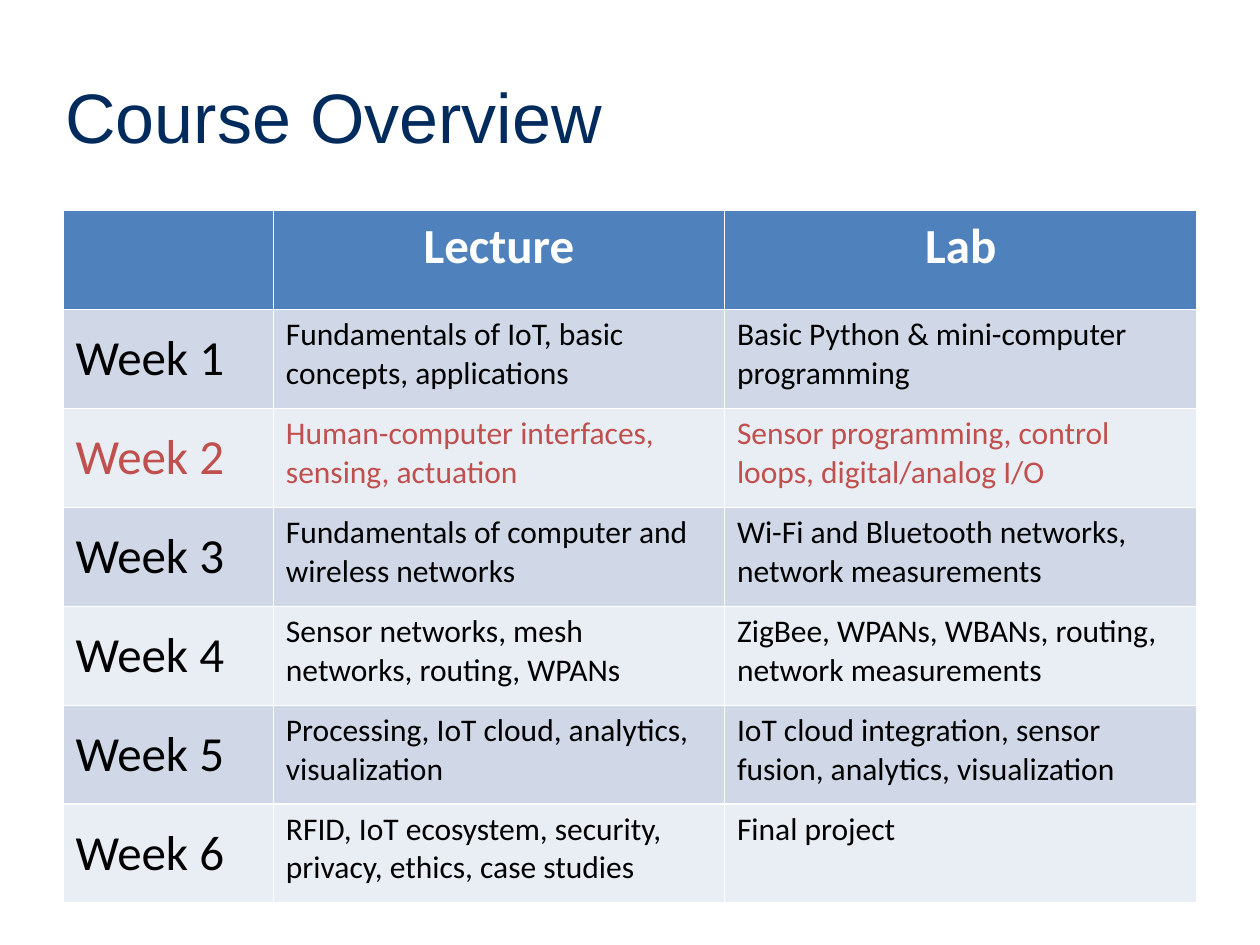
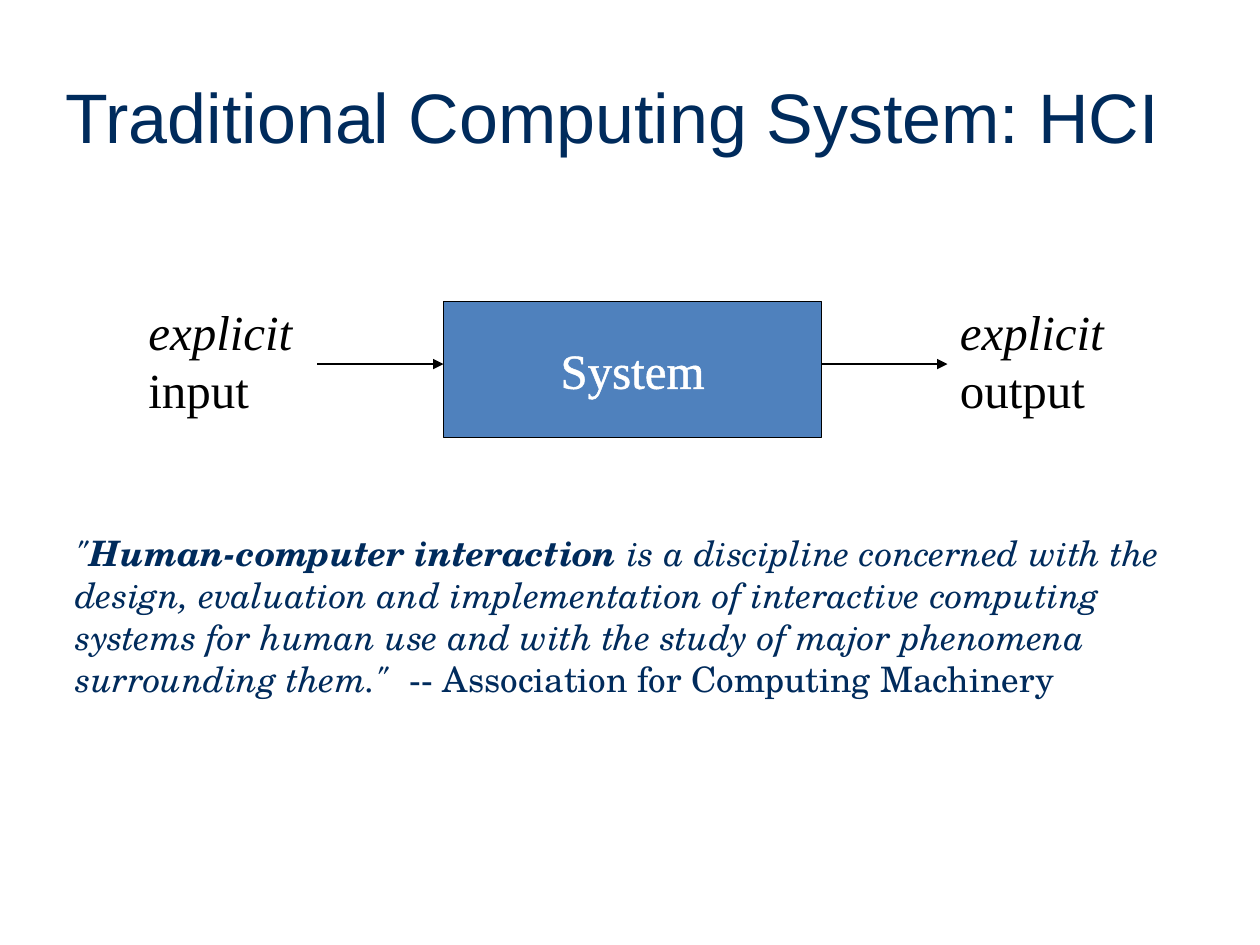
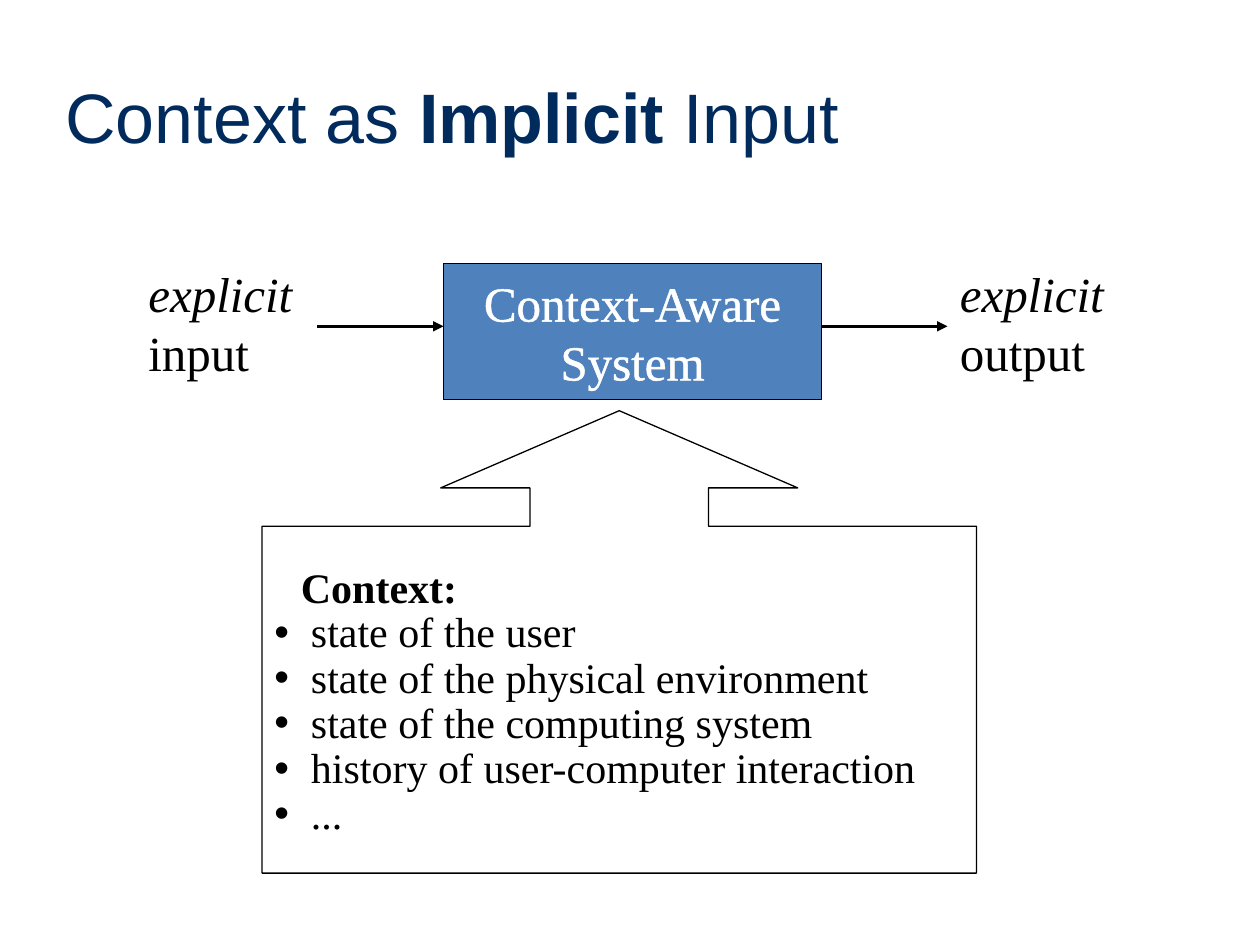
from lxml import etree
from pptx import Presentation
from pptx.dml.color import RGBColor
from pptx.enum.shapes import MSO_CONNECTOR, MSO_SHAPE
from pptx.enum.text import MSO_ANCHOR, MSO_AUTO_SIZE, PP_ALIGN
from pptx.oxml.ns import qn
from pptx.util import Inches, Pt

LEFT, CENTER = PP_ALIGN.LEFT, PP_ALIGN.CENTER
TOP, MIDDLE = MSO_ANCHOR.TOP, MSO_ANCHOR.MIDDLE
NO_FIT, GROW = MSO_AUTO_SIZE.NONE, MSO_AUTO_SIZE.SHAPE_TO_FIT_TEXT
RECTANGLE, CALLOUT = MSO_SHAPE.RECTANGLE, MSO_SHAPE.UP_ARROW_CALLOUT
STRAIGHT = MSO_CONNECTOR.STRAIGHT

NAVY, BLUE, RED = "002B5C", "4F81BD", "C0504D"
BLACK, WHITE = "000000", "FFFFFF"
ROW_FILLS = ("D0D8E8", "E9EDF4")
TITLE_ONLY, TITLE_AND_BODY = 5, 1

TITLE_FORMAT = dict(font="Arial", size=40, color=NAVY)
DIAGRAM_FORMAT = dict(font="Times New Roman", size=28, color=BLACK)

# A paragraph is a list of runs; a run is (text, style), style being "", "b", "i" or "bi".
COURSE_TITLE = [("Course Overview", "")]
HCI_TITLE = [("Traditional Computing System: HCI", "")]
CONTEXT_TITLE = [("Context as ", ""), ("Implicit", "b"), (" Input", "")]

COURSE_HEADER = ("", "Lecture", "Lab")
COURSE_WEEKS = [
    ("Fundamentals of IoT, basic concepts, applications",
     "Basic Python & mini-computer programming"),
    ("Human-computer interfaces, sensing, actuation",
     "Sensor programming, control loops, digital/analog I/O"),
    ("Fundamentals of computer and wireless networks",
     "Wi-Fi and Bluetooth networks, network measurements"),
    ("Sensor networks, mesh networks, routing, WPANs",
     "ZigBee, WPANs, WBANs, routing, network measurements"),
    ("Processing, IoT cloud, analytics, visualization",
     "IoT cloud integration, sensor fusion, analytics, visualization"),
    ("RFID, IoT ecosystem, security, privacy, ethics, case studies",
     "Final project"),
]
CURRENT_WEEK = 2
COURSE_COLUMNS = (1.67, 3.58, 3.75)

HCI_QUOTE = [
    ('"', "i"),
    ("Human-computer interaction ", "bi"),
    ("is a discipline concerned with the design, evaluation and implementation of "
     "interactive computing systems for human use and with the study of major "
     'phenomena surrounding them."', "i"),
    ("  -- Association for Computing Machinery", ""),
]

CONTEXT_ITEMS = [
    "state of the user",
    "state of the physical environment",
    "state of the computing system",
    "history of user-computer interaction",
    "...",
]


def rgb(value):
    return RGBColor.from_string(value)


def inches(*lengths):
    return [Inches(length) for length in lengths]


def write(frame, paragraphs, font, size, color, align=LEFT, anchor=TOP,
          wrap=True, fit=NO_FIT, outline=None):
    """Fill a text frame with paragraphs, each a list of (text, style) runs."""
    frame.word_wrap = wrap
    frame.auto_size = fit
    frame.vertical_anchor = anchor
    for number, runs in enumerate(paragraphs):
        paragraph = frame.add_paragraph() if number else frame.paragraphs[0]
        paragraph.alignment = align
        for text, style in runs:
            run = paragraph.add_run()
            run.text = text
            run.font.name = font
            run.font.size = Pt(size)
            run.font.bold = "b" in style
            run.font.italic = "i" in style
            run.font.color.rgb = rgb(color)
            if outline:
                add_outline(run, outline)


def add_outline(run, color):
    line = etree.Element(qn("a:ln"), w=str(Pt(0.75)))
    fill = etree.SubElement(line, qn("a:solidFill"))
    etree.SubElement(fill, qn("a:srgbClr"), val=color)
    run.font._element.insert(0, line)


def set_indent(paragraph, margin, first_line=0, bullet=None):
    properties = paragraph._p.get_or_add_pPr()
    properties.set("marL", str(Inches(margin)))
    properties.set("indent", str(Inches(first_line)))
    if bullet:
        etree.SubElement(properties, qn("a:buFont"), typeface="Arial")
        etree.SubElement(properties, qn("a:buChar"), char=bullet)
    else:
        etree.SubElement(properties, qn("a:buNone"))


def add_titled_slide(deck, layout, title_runs):
    slide = deck.slides.add_slide(deck.slide_layouts[layout])
    title = slide.shapes.title
    title.left, title.top, title.width, title.height = inches(0.42, 0.42, 9.08, 1)
    write(title.text_frame, [title_runs], anchor=MIDDLE, **TITLE_FORMAT)
    return slide


def add_outlined_shape(slide, kind, box, fill=None):
    shape = slide.shapes.add_shape(kind, *inches(*box))
    shape.shadow.inherit = False
    if fill:
        shape.fill.solid()
        shape.fill.fore_color.rgb = rgb(fill)
    else:
        shape.fill.background()
    shape.line.color.rgb = rgb(BLACK)
    shape.line.width = Pt(0.75)
    return shape


def add_arrow(slide, start, end, y):
    arrow = slide.shapes.add_connector(STRAIGHT, *inches(start, y, end, y))
    arrow.line.color.rgb = rgb(BLACK)
    arrow.line.width = Pt(1.5)
    etree.SubElement(arrow.line._get_or_add_ln(), qn("a:tailEnd"), type="triangle")
    etree.SubElement(arrow._element.spPr, qn("a:effectLst"))


def add_system_diagram(slide, top, system_lines):
    """Draw explicit input -> system -> explicit output, the system box at top."""
    system_left, system_width, arrow_length = 3.52, 3, 1
    system_right = system_left + system_width
    output_left = system_right + arrow_length

    system = add_outlined_shape(slide, RECTANGLE,
                                (system_left, top, system_width, 1.08), BLUE)
    write(system.text_frame, [[(line, "")] for line in system_lines], align=CENTER,
          anchor=MIDDLE, wrap=False, outline=WHITE,
          **{**DIAGRAM_FORMAT, "color": WHITE})

    for start in (system_left - arrow_length, system_right):
        add_arrow(slide, start, start + arrow_length, top + 0.5)

    for left, direction in ((1.08, "input"), (output_left, "output")):
        label = slide.shapes.add_textbox(*inches(left, top - 0.05, 1.34, 1.03))
        write(label.text_frame, [[("explicit", "i")], [(direction, "")]],
              wrap=False, fit=GROW, **DIAGRAM_FORMAT)


def fill_cell(cell, text, fill, size, color, style="", align=LEFT, anchor=TOP):
    cell.fill.solid()
    cell.fill.fore_color.rgb = rgb(fill)
    cell.vertical_anchor = anchor
    write(cell.text_frame, [[(text, style)]], font="Calibri", size=size,
          color=color, align=align, anchor=None, wrap=None, fit=None)


def build_course_overview(deck):
    slide = add_titled_slide(deck, TITLE_ONLY, COURSE_TITLE)
    table = slide.shapes.add_table(len(COURSE_WEEKS) + 1, len(COURSE_COLUMNS),
                                   *inches(0.5, 1.67, 9, 5.5)).table
    for column, width in zip(table.columns, COURSE_COLUMNS):
        column.width = Inches(width)
    for column, heading in enumerate(COURSE_HEADER):
        fill_cell(table.cell(0, column), heading, BLUE, 28, WHITE, "b", CENTER)
    for week, topics in enumerate(COURSE_WEEKS, start=1):
        fill = ROW_FILLS[(week - 1) % 2]
        color = RED if week == CURRENT_WEEK else BLACK
        fill_cell(table.cell(week, 0), f"Week {week}", fill, 28, color, anchor=MIDDLE)
        for column, topic in enumerate(topics, start=1):
            fill_cell(table.cell(week, column), topic, fill, 18, color)


def build_traditional_system(deck):
    slide = add_titled_slide(deck, TITLE_AND_BODY, HCI_TITLE)
    quote = slide.placeholders[1]
    quote.left, quote.top, quote.width, quote.height = inches(0.5, 4.17, 9, 3)
    write(quote.text_frame, [HCI_QUOTE], font="TeX Gyre Schola", size=20, color=NAVY)
    paragraph = quote.text_frame.paragraphs[0]
    set_indent(paragraph, 0)
    paragraph.space_before = Pt(0)
    add_system_diagram(slide, 2.39, ["System"])


def build_context_input(deck):
    slide = add_titled_slide(deck, TITLE_ONLY, CONTEXT_TITLE)
    add_system_diagram(slide, 2.09, ["Context-Aware", "System"])
    context = add_outlined_shape(slide, CALLOUT, (2.08, 3.26, 5.67, 3.67))
    for number, value in enumerate((0.386, 0.386, 0.167, 0.75)):
        context.adjustments[number] = value
    lines = [[("Context:", "b")]] + [[(item, "")] for item in CONTEXT_ITEMS]
    write(context.text_frame, lines, anchor=MIDDLE, wrap=False,
          **{**DIAGRAM_FORMAT, "size": 24})
    heading, *items = context.text_frame.paragraphs
    set_indent(heading, 0.21)
    for item in items:
        set_indent(item, 0.29, -0.29, "•")
        item.line_spacing = 0.9


def main():
    deck = Presentation()
    deck.slide_width, deck.slide_height = inches(10, 7.5)
    build_course_overview(deck)
    build_traditional_system(deck)
    build_context_input(deck)
    deck.save("out.pptx")


if __name__ == "__main__":
    main()
